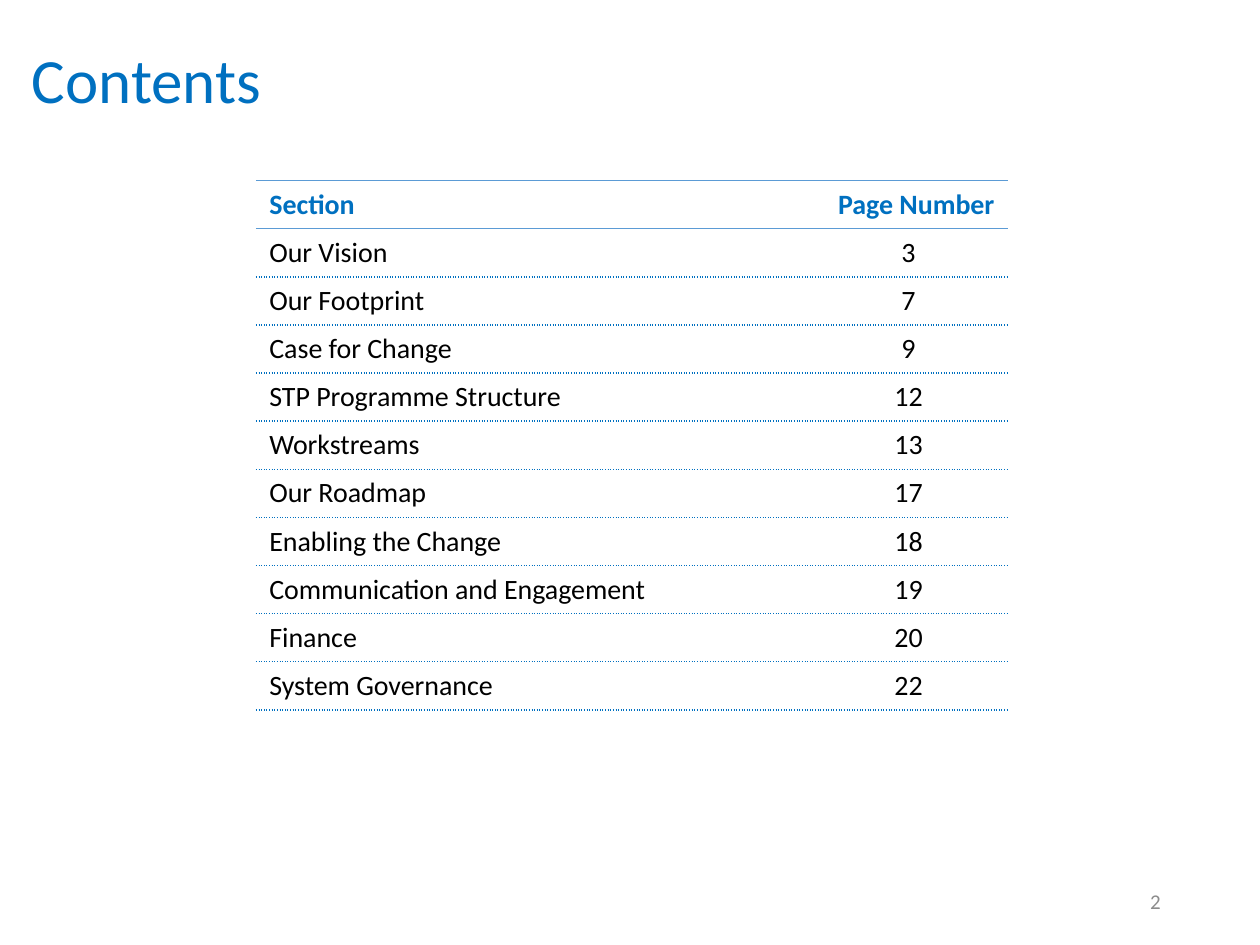
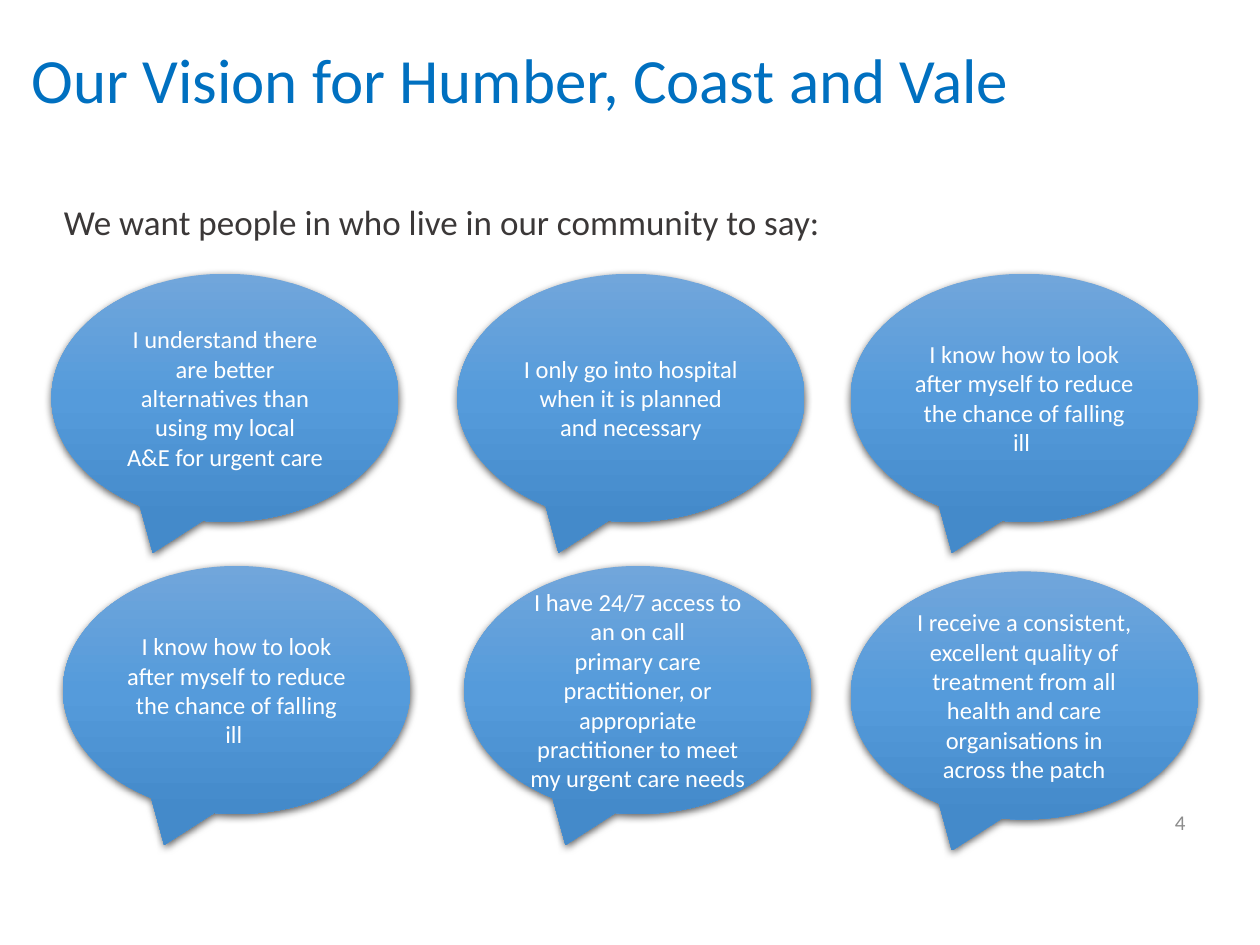
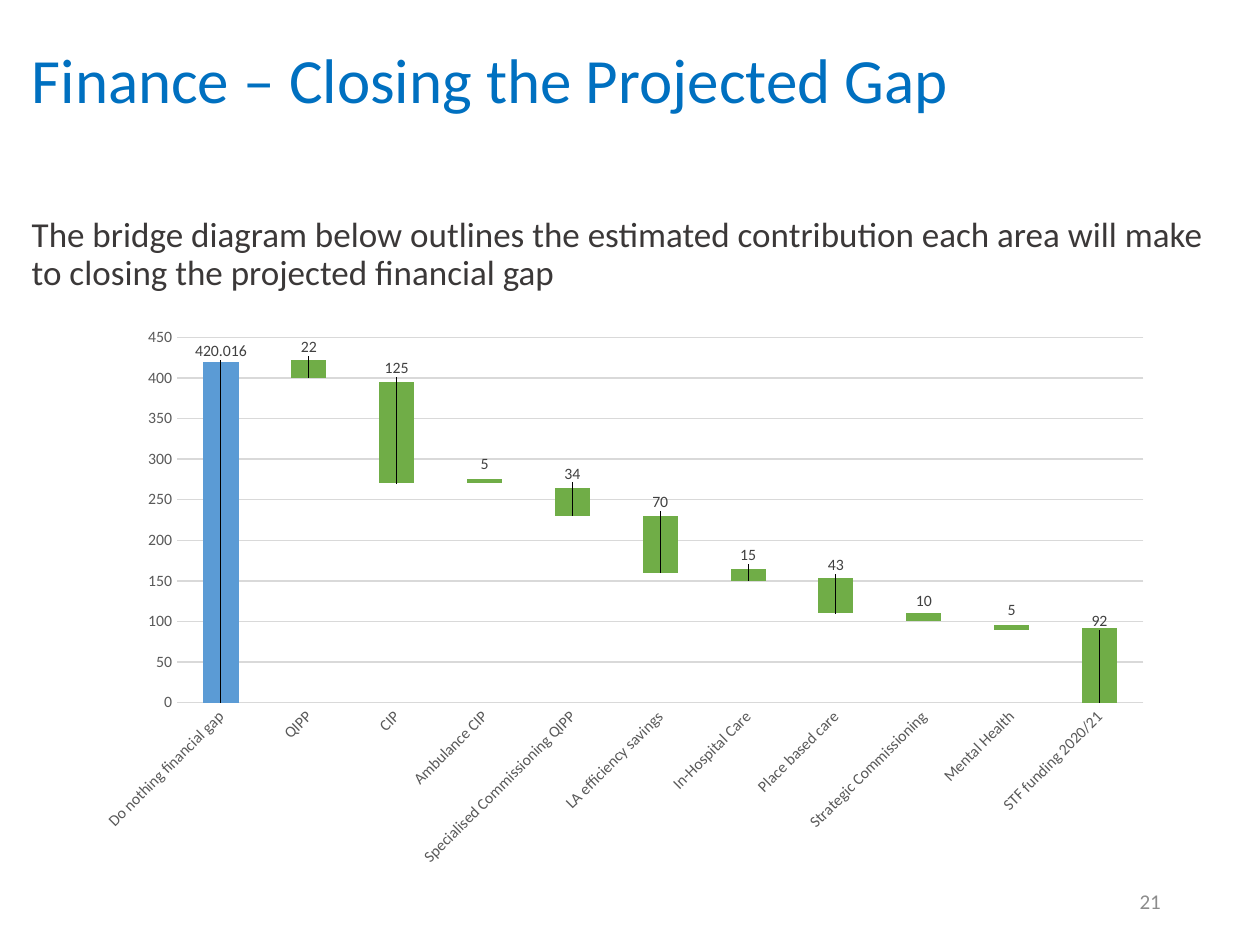
from itertools import accumulate

from lxml import etree
from pptx import Presentation
from pptx.chart.data import CategoryChartData
from pptx.dml.color import RGBColor
from pptx.enum.chart import XL_CHART_TYPE as Chart, XL_LABEL_POSITION as Place, XL_TICK_MARK as Tick
from pptx.enum.shapes import MSO_SHAPE as Shape
from pptx.enum.text import MSO_ANCHOR as Anchor, PP_ALIGN as Align
from pptx.oxml import parse_xml
from pptx.oxml.ns import nsdecls, qn
from pptx.util import Cm, Pt

# Shared style
FONT = "Calibri"
BLUE = RGBColor(0x00, 0x70, 0xC0)
SKY = RGBColor(0x5B, 0x9B, 0xD5)
GREEN = RGBColor(0x70, 0xAD, 0x47)
BLACK = RGBColor(0, 0, 0)
WHITE = RGBColor(255, 255, 255)
DARK = RGBColor(0x3B, 0x38, 0x38)
LABEL = RGBColor(0x40, 0x40, 0x40)
AXIS = RGBColor(0x59, 0x59, 0x59)
GREY = RGBColor(0x8C, 0x8C, 0x8C)
RULE = RGBColor(0xD9, 0xD9, 0xD9)
SHADES = [(0, "71A6DB"), (50, "559BDB"), (100, "448ACA")]

# Content
HEADS = ("Section", "Page Number")
SECTIONS = [
    ("Our Vision", 3),
    ("Our Footprint", 7),
    ("Case for Change", 9),
    ("STP Programme Structure", 12),
    ("Workstreams", 13),
    ("Our Roadmap", 17),
    ("Enabling the Change", 18),
    ("Communication and Engagement", 19),
    ("Finance", 20),
    ("System Governance", 22),
]

LEAD = "We want people in who live in our community to say:"
HEALTH = "I know how to look after myself to reduce the chance of falling ill "
VOICES = [  # left, top, words
    (1.04, 5.52, "I understand there are better\nalternatives than using my local\n"
                 "A&E for urgent care"),
    (9.22, 5.52, "I only go into hospital when it is planned and necessary"),
    (17.15, 5.52, HEALTH),
    (1.27, 11.41, HEALTH),
    (9.36, 11.41, "I have 24/7 access to an on call\nprimary care practitioner, or\n"
                  "appropriate practitioner to meet\nmy urgent care needs"),
    (17.15, 11.52, "I receive a consistent, excellent quality of treatment from all "
                   "health and care organisations in across the patch"),
]

BRIDGE = ("The bridge diagram below outlines the estimated contribution each area "
          "will make to closing the projected financial gap")
GAP = ("Do nothing financial gap", 420.016)
SAVINGS = [
    ("QIPP", 22),
    ("CIP", 125),
    ("Ambulance CIP", 5),
    ("Specialised Commissioning QIPP", 34),
    ("LA efficiency savings", 70),
    ("In-Hospital Care", 15),
    ("Place based care", 43),
    ("Strategic Commissioning", 10),
    ("Mental Health", 5),
]
FUNDING = ("STF funding 2020/21", 92)
TOP, STEP = 450, 50
PLOT = {"x": 0.09, "y": 0.04, "w": 0.89, "h": 0.65}


# Helpers
def style(font, size, color, bold=False):
    font.name, font.size, font.bold = FONT, Pt(size), bold
    font.color.rgb = color


def write(frame, text, size, color, align=Align.LEFT, bold=False, space=None):
    frame.text = text
    frame.word_wrap = True
    for par in frame.paragraphs:
        par.alignment = align
        par.line_spacing = space
        for run in par.runs:
            style(run.font, size, color, bold)


def add_text(slide, box, text, size, color, anchor=Anchor.TOP, **look):
    frame = slide.shapes.add_textbox(*map(Cm, box)).text_frame
    write(frame, text, size, color, **look)
    frame.vertical_anchor = anchor


def add_slide(deck, title, page, spot=(17.93, 17.65)):
    slide = deck.slides.add_slide(deck.slide_layouts[6])
    add_text(slide, (0.39, 0.36, 21.89, 2.64), title, 36, BLUE, Anchor.MIDDLE, space=0.9)
    add_text(slide, (*spot, 5.72, 1.02), str(page), 12, GREY, Anchor.MIDDLE, align=Align.RIGHT)
    return slide


# Contents table
def edge(cell, sides):
    props = cell._tc.get_or_add_tcPr()
    for spot, (side, look) in enumerate(sides.items()):
        if look:
            color, dash = look
            body = (f'<a:solidFill><a:srgbClr val="{color}"/></a:solidFill>'
                    f'<a:prstDash val="{dash}"/>')
        else:
            body = "<a:noFill/>"
        props.insert(spot, parse_xml(
            f'<a:{side} {nsdecls("a")} w="12700">{body}</a:{side}>'))


def add_contents(slide):
    rows = [HEADS, *SECTIONS]
    high = 0.97
    table = slide.shapes.add_table(len(rows), 2, Cm(5.16), Cm(3.64), Cm(15.16),
                                   Cm(high * len(rows))).table
    table.first_row = table.horz_banding = False
    for col, wide in zip(table.columns, (11.15, 4.01)):
        col.width = Cm(wide)
    solid, dots = (SKY, "solid"), (BLUE, "sysDot")
    for r, row in enumerate(rows):
        head = r == 0
        table.rows[r].height = Cm(high)
        above = solid if r < 2 else dots
        below = solid if head else dots
        for c, item in enumerate(row):
            cell = table.cell(r, c)
            cell.margin_left = cell.margin_right = Cm(0.27)
            cell.margin_top = cell.margin_bottom = Cm(0.14)
            cell.fill.background()
            edge(cell, {"lnL": None, "lnR": None, "lnT": above, "lnB": below})
            align = Align.LEFT if c == 0 else Align.RIGHT if head else Align.CENTER
            write(cell.text_frame, str(item), 16, BLUE if head else BLACK, align, head)


# Speech bubbles
def add_voice(slide, left, top, words):
    bubble = slide.shapes.add_shape(Shape.OVAL_CALLOUT, Cm(left), Cm(top), Cm(7), Cm(5))
    bubble.line.fill.background()
    stops = "".join(f'<a:gs pos="{pos * 1000}"><a:srgbClr val="{color}"/></a:gs>'
                    for pos, color in SHADES)
    props = bubble._element.spPr
    props.find(qn("a:ln")).addprevious(parse_xml(
        f'<a:gradFill {nsdecls("a")} rotWithShape="1"><a:gsLst>{stops}</a:gsLst>'
        '<a:lin ang="5400000" scaled="0"/></a:gradFill>'))
    props.append(parse_xml(
        f'<a:effectLst {nsdecls("a")}><a:outerShdw blurRad="57150" dist="19050" '
        'dir="5400000" algn="ctr" rotWithShape="0"><a:srgbClr val="000000">'
        '<a:alpha val="63000"/></a:srgbClr></a:outerShdw></a:effectLst>'))
    write(bubble.text_frame, words, 14, WHITE, Align.CENTER)
    bubble.text_frame.vertical_anchor = Anchor.MIDDLE


# Bridge chart
def layout(**parts):
    node = etree.Element(qn("c:layout"))
    manual = etree.SubElement(node, qn("c:manualLayout"))
    for key, val in parts.items():
        etree.SubElement(manual, qn(f"c:{key}")).set("val", str(val))
    return node


def drop_leaders(series):
    """Keep moved labels free of leader lines."""
    series.data_labels._element.append(parse_xml(
        f'<c:extLst {nsdecls("c")}><c:ext uri="{{CE6537A1-D6FC-4f65-9D91-7224C49458BB}}" '
        'xmlns:c15="http://schemas.microsoft.com/office/drawing/2012/chart">'
        '<c15:showLeaderLines val="0"/></c:ext></c:extLst>'))


def add_label(series, spot, value, drop=0):
    """Label a bar just above its top."""
    label = series.points[spot].data_label
    style(label.font, 9, LABEL)
    label.position = Place.INSIDE_BASE
    lift = round(drop - value / TOP * PLOT["h"], 2)
    for node in series._element.iter(qn("c:dLbl")):
        mark = node.find(qn("c:idx"))
        if mark.get("val") == str(spot):
            mark.addnext(layout(x=0, y=lift))


def add_bridge(slide):
    names, cuts = zip(*SAVINGS)
    bases = [round(GAP[1] - done, -1) for done in accumulate(cuts)]
    steps = [0, *cuts, FUNDING[1]]
    last = len(steps) - 1
    data = CategoryChartData()
    data.categories = [GAP[0], *names, FUNDING[0]]
    data.add_series("Series 1", [GAP[1]] + [None] * last)
    data.add_series("Series 2", [0, *map(int, bases), 0])
    data.add_series("Series 3", steps)
    chart = slide.shapes.add_chart(Chart.COLUMN_STACKED, Cm(1.6), Cm(6.35), Cm(21.89),
                                   Cm(11.33), data).chart
    chart.has_legend = chart.has_title = False
    style(chart.font, 10, BLACK)

    plot = chart.plots[0]
    plot.gap_width, plot.overlap, plot.vary_by_categories = 150, 100, False
    area = chart._chartSpace.chart.plotArea
    for old in area.findall(qn("c:layout")):
        area.remove(old)
    area.insert(0, layout(layoutTarget="inner", xMode="edge", yMode="edge", **PLOT))

    for axis in (chart.category_axis, chart.value_axis):
        axis.major_tick_mark = axis.minor_tick_mark = Tick.NONE
        style(axis.tick_labels.font, 9, AXIS)
    cats, vals = chart.category_axis, chart.value_axis
    cats._element.find(qn("c:txPr")).find(qn("a:bodyPr")).set("rot", "-2700000")
    vals.minimum_scale, vals.maximum_scale, vals.major_unit = 0, TOP, STEP
    vals.format.line.fill.background()
    for line in (cats.format.line, vals.major_gridlines.format.line):
        line.color.rgb, line.width = RULE, Pt(0.75)

    gap, base, saved = plot.series
    base.format.fill.background()
    for series, color in ((gap, SKY), (saved, GREEN)):
        series.format.fill.solid()
        series.format.fill.fore_color.rgb = color
        series.data_labels.show_value = False
        drop_leaders(series)
    add_label(gap, 0, GAP[1], 0.01)
    for spot, value in enumerate(steps):
        if value:
            add_label(saved, spot, value, 0.01 if spot == last else 0)


def main():
    deck = Presentation()
    deck.slide_width, deck.slide_height = Cm(25.4), Cm(19.05)

    add_contents(add_slide(deck, "Contents", 2))

    vision = add_slide(deck, "Our Vision for Humber, Coast and Vale", 4, (18.43, 16.07))
    add_text(vision, (1.04, 4.01, 23.65, 8.51), LEAD, 20, DARK, space=0.9)
    for voice in VOICES:
        add_voice(vision, *voice)

    finance = add_slide(deck, "Finance – Closing the Projected Gap", 21)
    add_bridge(finance)
    add_text(finance, (0.39, 4.25, 24.36, 13.34), BRIDGE, 20, DARK, space=0.9)

    deck.save("out.pptx")


if __name__ == "__main__":
    main()
